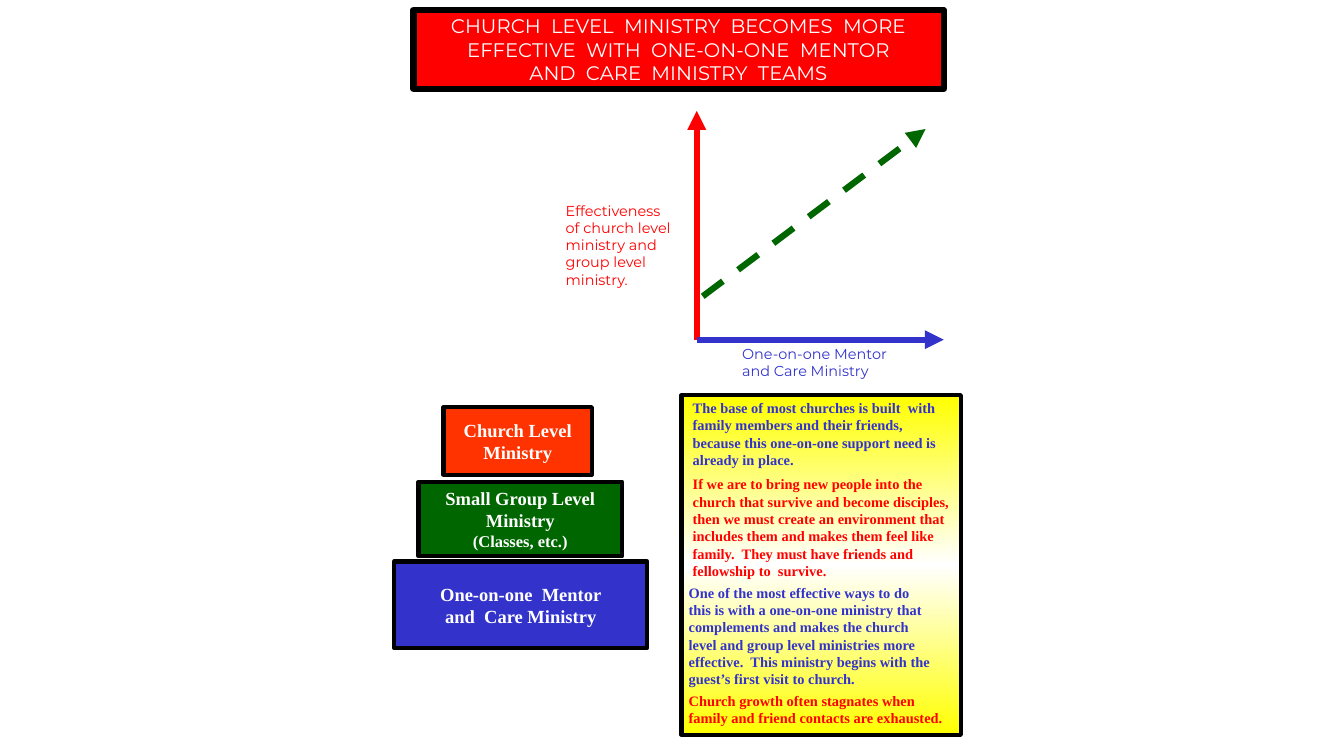
from copy import deepcopy

from lxml import etree
from pptx import Presentation
from pptx import util as u
from pptx.dml.color import RGBColor
from pptx.enum import dml, shapes, text
from pptx.oxml.ns import qn

PX = 9144  # EMU per px, 100 px to the inch
SANS, SERIF = "Montserrat", "Times New Roman"
RED = RGBColor(0xFF, 0x00, 0x00)
ORANGE = RGBColor(0xFF, 0x33, 0x00)
GREEN = RGBColor(0x00, 0x66, 0x00)
BLUE = RGBColor(0x33, 0x33, 0xCC)
YELLOW = RGBColor(0xFF, 0xFF, 0x00)
WHITE = RGBColor(0xFF, 0xFF, 0xFF)
BLACK = RGBColor(0x00, 0x00, 0x00)
LEFT, CENTER = text.PP_ALIGN.LEFT, text.PP_ALIGN.CENTER
TOP, MIDDLE = text.MSO_ANCHOR.TOP, text.MSO_ANCHOR.MIDDLE

# Content: boxes are left, top, width, height in px
TITLE_BOX = (410, 10, 526, 78)
TITLE = [
    "CHURCH  LEVEL  MINISTRY  BECOMES  MORE",
    "EFFECTIVE  WITH  ONE-ON-ONE  MENTOR",
    "AND  CARE  MINISTRY  TEAMS",
]

# start, end, colour, dash
ARROWS = [
    ((691, 337), (691, 110), RED, None),
    ((691, 337), (936, 337), BLUE, None),
    ((697, 294), (918, 128), GREEN, dml.MSO_LINE.DASH),
]

AXIS_LABELS = [
    ((729, 338, 164, 42), BLUE, ["One-on-one Mentor", "and Care Ministry"]),
    ((554, 196, 132, 111), RED,
     ["Effectiveness", "of church level", "ministry and", "group level", "ministry."]),
]

# box, fill, lines, smaller note
LEVELS = [
    ((391, 557, 251, 86), BLUE, ["One-on-one  Mentor", "and  Care Ministry"], None),
    ((415, 478, 202, 74), GREEN, ["Small Group Level", "Ministry"], "(Classes, etc.)"),
    ((440, 404, 147, 67), ORANGE, ["Church Level", "Ministry"], None),
]

PANEL_BOX = (676, 392, 277, 337)
# colour, indent in px, gap above in points, lines
REASONS = [
    (BLUE, 4, 0, [
        "The base of most churches is built  with",
        "family members and their friends,",
        "because this one-on-one support need is",
        "already in place.",
    ]),
    (RED, 4, 5, [
        "If we are to bring new people into the",
        "church that survive and become disciples,",
        "then we must create an environment that",
        "includes them and makes them feel like",
        "family.  They must have friends and",
        "fellowship to  survive.",
    ]),
    (BLUE, 0, 3.3, [
        "One of the most effective ways to do",
        "this is with a one-on-one ministry that",
        "complements and makes the church",
        "level and group level ministries more",
        "effective.  This ministry begins with the",
        "guest’s first visit to church.",
    ]),
    (RED, 0, 3.3, [
        "Church growth often stagnates when",
        "family and friend contacts are exhausted.",
    ]),
]


def px(values):
    return [value * PX for value in values]


def place(shape, box):
    shape.left, shape.top, shape.width, shape.height = px(box)


def outline(shape, width):
    shape.line.color.rgb = BLACK
    shape.line.width = u.Pt(width)


def set_frame(shape, anchor):
    frame = shape.text_frame
    frame.word_wrap = True
    frame.auto_size = text.MSO_AUTO_SIZE.NONE
    frame.vertical_anchor = anchor
    frame.margin_left = frame.margin_right = 7 * PX
    frame.margin_top = frame.margin_bottom = 4 * PX
    return frame


def write(frame, lines, font, size, color, bold=False, align=LEFT):
    frame.text = "\n".join(lines)
    for para in frame.paragraphs:
        style(para, font, size, color, bold, align)


def style(para, font, size, color, bold, align):
    para.alignment = align
    para.space_before = u.Pt(0)
    for span in para.runs:
        span.font.name = font
        span.font.size = u.Pt(size)
        span.font.bold = bold
        span.font.color.rgb = color


def add_arrow(page, start, end, color, dash):
    arrow = page.shapes.add_connector(
        shapes.MSO_CONNECTOR.STRAIGHT, *px(start), *px(end))
    arrow.line.color.rgb = color
    arrow.line.width = u.Pt(4.5)
    if dash:
        arrow.line.dash_style = dash
    etree.SubElement(arrow.line._get_or_add_ln(), qn("a:tailEnd"), type="triangle")
    etree.SubElement(arrow._element.spPr, qn("a:effectLst"))


def fill_panel(panel):
    panel.fill.gradient()
    panel.fill.gradient_angle = 90
    stop_list = next(panel._element.iter(qn("a:gsLst")))
    stop_list.append(deepcopy(stop_list[0]))
    stops = zip(panel.fill.gradient_stops, (0, 0.5, 1), (YELLOW, WHITE, YELLOW))
    for stop, position, color in stops:
        stop.position = position
        stop.color.rgb = color


def main():
    deck = Presentation()
    deck.slide_width, deck.slide_height = px((1333, 750))
    page = deck.slides.add_slide(deck.slide_layouts[1])

    # Title banner
    title = page.shapes.title
    place(title, TITLE_BOX)
    title.fill.solid()
    title.fill.fore_color.rgb = RED
    outline(title, 4.5)
    write(set_frame(title, TOP), TITLE, SANS, 14, WHITE, align=CENTER)

    # Axes, trend and axis labels
    for arrow in ARROWS:
        add_arrow(page, *arrow)
    for box, color, lines in AXIS_LABELS:
        label = page.shapes.add_textbox(*px(box))
        write(set_frame(label, TOP), lines, SANS, 10.3, color)

    # Ministry levels
    for box, color, lines, note in LEVELS:
        level = page.shapes.add_shape(shapes.MSO_SHAPE.RECTANGLE, *px(box))
        level.shadow.inherit = False
        level.fill.solid()
        level.fill.fore_color.rgb = color
        outline(level, 3)
        frame = set_frame(level, MIDDLE)
        write(frame, lines, SERIF, 13.2, WHITE, True, CENTER)
        if note:
            para = frame.add_paragraph()
            para.text = note
            style(para, SERIF, 11.8, WHITE, True, CENTER)

    # Reasons panel
    panel = page.placeholders[1]
    place(panel, PANEL_BOX)
    fill_panel(panel)
    outline(panel, 3)
    frame = set_frame(panel, TOP)
    frame.text = "\n".join(line for reason in REASONS for line in reason[3])
    paras = iter(frame.paragraphs)
    for color, indent, gap, lines in REASONS:
        for number in range(len(lines)):
            para = next(paras)
            style(para, SERIF, 10.3, color, True, LEFT)
            para.space_before = u.Pt(0 if number else gap)
            props = para._p.get_or_add_pPr()
            props.set("marL", str(indent * PX))
            props.set("indent", "0")
            etree.SubElement(props, qn("a:buNone"))

    deck.save("out.pptx")


if __name__ == "__main__":
    main()
